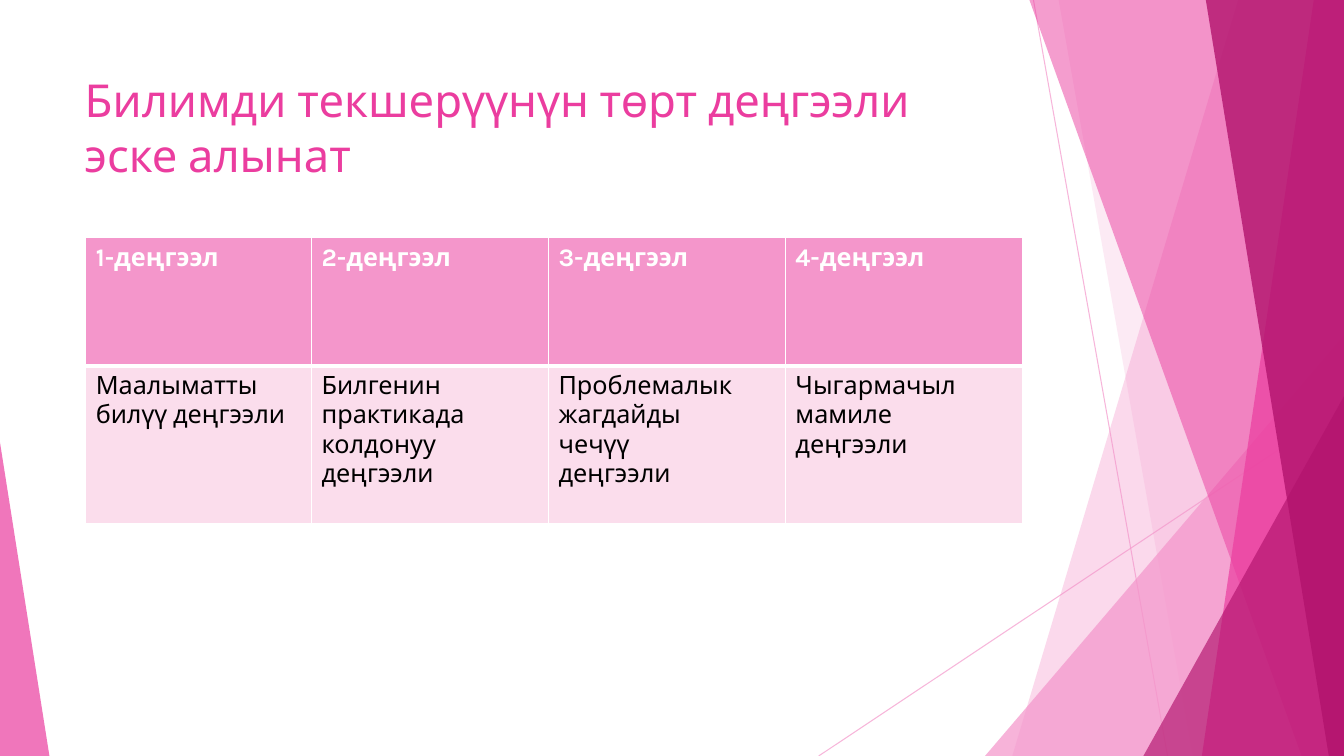
from lxml.etree import SubElement
from pptx import Presentation
from pptx.dml.color import RGBColor
from pptx.enum.shapes import MSO_CONNECTOR, MSO_SHAPE
from pptx.enum.text import MSO_ANCHOR, MSO_AUTO_SIZE, PP_ALIGN
from pptx.oxml.ns import qn
from pptx.util import Inches, Pt

WIDTH, HEIGHT = 13.33, 7.5
FONT = "Karla"
PINK = RGBColor(0xF4, 0x96, 0xCB)
MAGENTA = RGBColor(0xEB, 0x3D, 0x9F)
BERRY = RGBColor(0xB2, 0x13, 0x6D)
PALE = RGBColor(0xFB, 0xDD, 0xEC)
WHITE = RGBColor(0xFF, 0xFF, 0xFF)
BLACK = RGBColor(0, 0, 0)

TITLE = "Билимди текшерүүнүн төрт деңгээли\vэске алынат"
LEVELS = [
    ("1-деңгээл", "Маалыматты билүү деңгээли"),
    ("2-деңгээл", "Билгенин практикада\nколдонуу\nдеңгээли"),
    ("3-деңгээл", "Проблемалык\nжагдайды\nчечүү\nдеңгээли"),
    ("4-деңгээл", "Чыгармачыл\nмамиле\nдеңгээли"),
]
TABLE_LEFT, TABLE_TOP = 0.85, 2.36
COLUMN_WIDTHS = [2.24, 2.35, 2.35, 2.35]
ROW_HEIGHTS = [1.27, 1.57]

RAYS = [((10.25, 0), (11.58, HEIGHT)), ((WIDTH, 4.03), (8.12, HEIGHT))]
# Corner points, colour, opacity in percent; from back to front
RIGHT_EDGE = [(WIDTH, 0), (WIDTH, HEIGHT)]
FACETS = [
    ([(12.28, 0), *RIGHT_EDGE, (10.04, HEIGHT)], PINK, 36),
    ([(10.5, 0), *RIGHT_EDGE, (11.83, HEIGHT)], PINK, 20),
    ([(WIDTH, 3.33), (WIDTH, HEIGHT), (9.77, HEIGHT)], PINK, 72),
    ([(10.21, 0), *RIGHT_EDGE, (12.91, HEIGHT)], MAGENTA, 50),
    ([(13.03, 0), *RIGHT_EDGE, (11.92, HEIGHT)], MAGENTA, 70),
    ([(11.96, 0), *RIGHT_EDGE, (13.18, HEIGHT)], BERRY, 80),
    ([(WIDTH, 3.93), (WIDTH, HEIGHT), (11.34, HEIGHT)], BERRY, 66),
    ([(0, 4.39), (0.49, HEIGHT), (0, HEIGHT)], MAGENTA, 70),
]


def set_opacity(fill_parent, percent):
    color = fill_parent.find(qn("a:solidFill"))[0]
    SubElement(color, qn("a:alpha")).set("val", str(percent * 1000))


def add_ray(slide, start, end):
    ray = slide.shapes.add_connector(
        MSO_CONNECTOR.STRAIGHT, *[Inches(value) for value in (*start, *end)])
    ray.line.color.rgb = PINK
    ray.line.width = Pt(0.75)
    properties = ray._element.spPr
    set_opacity(properties.find(qn("a:ln")), 70)
    SubElement(properties, qn("a:effectLst"))


def add_facet(slide, corners, color, opacity):
    if len(corners) == 3:
        left, right = min(x for x, _ in corners), max(x for x, _ in corners)
        apex_x, top = corners[0]
        facet = slide.shapes.add_shape(
            MSO_SHAPE.ISOSCELES_TRIANGLE, Inches(left), Inches(top),
            Inches(right - left), Inches(HEIGHT - top))
        facet.adjustments[0] = (apex_x - left) / (right - left)
    else:
        points = [(Inches(x), Inches(y)) for x, y in corners]
        builder = slide.shapes.build_freeform(*points[0])
        builder.add_line_segments(points[1:], close=True)
        facet = builder.convert_to_shape()
    facet.shadow.inherit = False
    facet.fill.solid()
    facet.fill.fore_color.rgb = color
    facet.line.fill.background()
    set_opacity(facet._element.spPr, opacity)


def format_text(text_frame, size, color, bold=False):
    for paragraph in text_frame.paragraphs:
        paragraph.alignment = PP_ALIGN.LEFT
        for run in paragraph.runs:
            run.font.name = FONT
            run.font.size = Pt(size)
            run.font.bold = bold
            run.font.color.rgb = color


def add_title(slide):
    title = slide.shapes.title
    title.left, title.top = Inches(0.74), Inches(0.67)
    title.width, title.height = Inches(9.4), Inches(0.67)
    frame = title.text_frame
    frame.text = TITLE
    frame.word_wrap = True
    frame.auto_size = MSO_AUTO_SIZE.NONE
    frame.vertical_anchor = MSO_ANCHOR.TOP
    format_text(frame, 32.4, MAGENTA)


def set_borders(cell, widths):
    """Draw white borders; widths holds left, right, top and bottom in points."""
    properties = cell._tc.get_or_add_tcPr()
    for index, (side, width) in enumerate(zip("LRTB", widths)):
        line = properties.makeelement(qn(f"a:ln{side}"), {"w": str(Pt(width))})
        fill = SubElement(line, qn("a:solidFill"))
        SubElement(fill, qn("a:srgbClr")).set("val", str(WHITE))
        properties.insert(index, line)


def add_levels_table(slide):
    table = slide.shapes.add_table(
        len(ROW_HEIGHTS), len(LEVELS), Inches(TABLE_LEFT), Inches(TABLE_TOP),
        Inches(sum(COLUMN_WIDTHS)), Inches(sum(ROW_HEIGHTS))).table
    for row, height in zip(table.rows, ROW_HEIGHTS):
        row.height = Inches(height)
    for column_index, (width, texts) in enumerate(zip(COLUMN_WIDTHS, LEVELS)):
        table.columns[column_index].width = Inches(width)
        for row_index, text in enumerate(texts):
            header = row_index == 0
            cell = table.cell(row_index, column_index)
            cell.text_frame.text = text
            cell.fill.solid()
            cell.fill.fore_color.rgb = PINK if header else PALE
            format_text(cell.text_frame, 18, WHITE if header else BLACK, header)
            set_borders(cell, (1, 1, 1, 3) if header else (1, 1, 3, 1))


def main():
    presentation = Presentation()
    presentation.slide_width = Inches(WIDTH)
    presentation.slide_height = Inches(HEIGHT)
    slide = presentation.slides.add_slide(presentation.slide_layouts[5])
    for start, end in RAYS:
        add_ray(slide, start, end)
    for corners, color, opacity in FACETS:
        add_facet(slide, corners, color, opacity)
    add_title(slide)
    add_levels_table(slide)
    presentation.save("out.pptx")


if __name__ == "__main__":
    main()
